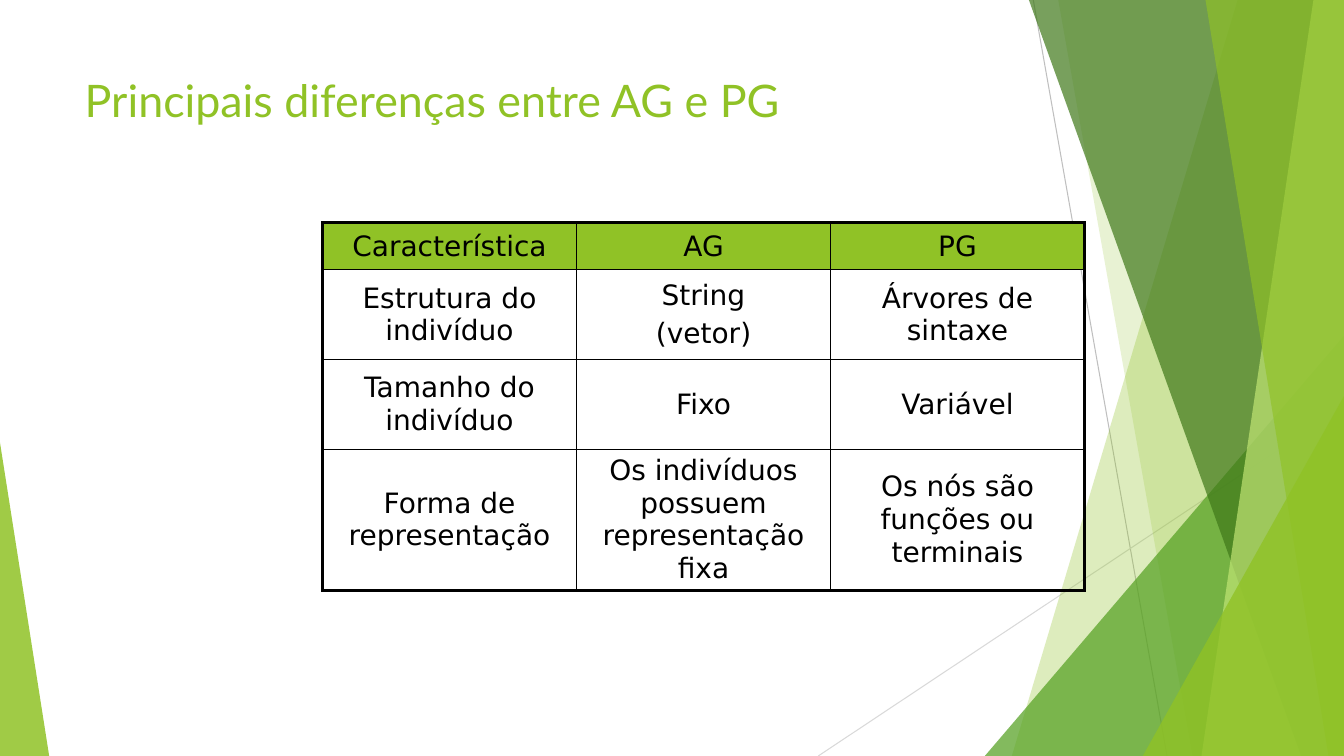
import pptx
import pptx.dml.color
import pptx.enum.shapes
import pptx.enum.text
import pptx.oxml
import pptx.oxml.ns
import pptx.util
from pptx.dml.color import RGBColor
from pptx.util import Cm

BLACK = RGBColor(0x00, 0x00, 0x00)
LIME = RGBColor(0x90, 0xC2, 0x26)
GREEN = RGBColor(0x54, 0xA0, 0x21)
FOREST = RGBColor(0x3F, 0x78, 0x19)
PALE_LIME = RGBColor(0xC0, 0xE4, 0x74)
GREY = RGBColor(0xBF, 0xBF, 0xBF)
LIGHT_GREY = RGBColor(0xD9, 0xD9, 0xD9)

WIDTH, HEIGHT = 33.87, 19.05

# Top-left x, bottom-left x, colour, opacity in percent
BANDS_BEHIND = [
    (31.19, 25.50, LIME, 30),
    (26.67, 30.05, LIME, 20),
]
BANDS_IN_FRONT = [
    (25.93, 32.79, FOREST, 70),
    (33.10, 30.28, PALE_LIME, 70),
    (30.38, 33.48, LIME, 65),
]

ROWS = [
    ["Característica", "AG", "PG"],
    ["Estrutura do indivíduo", "String\n(vetor)", "Árvores de sintaxe"],
    ["Tamanho do indivíduo", "Fixo", "Variável"],
    ["Forma de representação", "Os indivíduos possuem representação fixa",
     "Os nós são funções ou terminais"],
]
ROW_HEIGHTS = [1.19, 2.26, 2.26, 3.56]
COLUMN_WIDTH = 6.4


def write_text(frame, text, *, font, size, color, align, anchor, before=0):
    frame.word_wrap = True
    frame.vertical_anchor = anchor
    frame.text = text
    for para in frame.paragraphs:
        para.alignment = align
        para.space_before = pptx.util.Pt(before)
        for span in para.runs:
            span.font.name = font
            span.font.size = pptx.util.Pt(size)
            span.font.color.rgb = color


def paint(shape, color, opacity):
    shape.shadow.inherit = False
    shape.line.fill.background()
    shape.fill.solid()
    shape.fill.fore_color.rgb = color
    for tone in shape._element.spPr.iter(pptx.oxml.ns.qn("a:srgbClr")):
        alpha = pptx.oxml.parse_xml(
            f'<a:alpha {pptx.oxml.ns.nsdecls("a")} val="{opacity * 1000}"/>')
        tone.append(alpha)


def add_band(page, top_x, bottom_x, color, opacity):
    builder = page.shapes.build_freeform(Cm(top_x), 0)
    builder.add_line_segments([
        (Cm(WIDTH), 0), (Cm(WIDTH), Cm(HEIGHT)), (Cm(bottom_x), Cm(HEIGHT)),
    ], close=True)
    paint(builder.convert_to_shape(), color, opacity)


def add_corner(page, left, top, width, apex, color, opacity):
    shape = page.shapes.add_shape(
        pptx.enum.shapes.MSO_SHAPE.ISOSCELES_TRIANGLE,
        Cm(left), Cm(top), Cm(width), Cm(HEIGHT - top))
    shape.adjustments[0] = apex
    paint(shape, color, opacity)


def add_thin_line(page, start, end, color):
    line = page.shapes.add_connector(
        pptx.enum.shapes.MSO_CONNECTOR.STRAIGHT,
        *(Cm(value) for value in start + end))
    line.line.color.rgb = color
    line.line.width = pptx.util.Pt(0.75)
    line._element.spPr.append(pptx.oxml.parse_xml(
        f'<a:effectLst {pptx.oxml.ns.nsdecls("a")}/>'))


def add_decoration(page):
    add_thin_line(page, (26.04, 0), (29.41, HEIGHT), GREY)
    add_thin_line(page, (WIDTH, 10.24), (20.62, HEIGHT), LIGHT_GREY)
    for band in BANDS_BEHIND:
        add_band(page, *band)
    add_corner(page, 24.82, 8.46, WIDTH - 24.82, 1, GREEN, 72)
    for band in BANDS_IN_FRONT:
        add_band(page, *band)
    add_corner(page, 28.80, 9.98, WIDTH - 28.80, 1, LIME, 80)
    add_corner(page, 0, 11.15, 1.24, 0, LIME, 85)


def add_title(page, text):
    title = page.shapes.title
    title.left, title.top = Cm(1.88), Cm(1.7)
    title.width, title.height = Cm(23.88), Cm(3.66)
    write_text(title.text_frame, text, font="Lato", size=32, color=LIME,
               align=pptx.enum.text.PP_ALIGN.LEFT,
               anchor=pptx.enum.text.MSO_ANCHOR.TOP)
    title.text_frame.auto_size = pptx.enum.text.MSO_AUTO_SIZE.NONE


def set_borders(cell, outer_sides):
    for side in "LRTB":
        width = pptx.util.Pt(2.25 if side in outer_sides else 1)
        cell._tc.get_or_add_tcPr().append(pptx.oxml.parse_xml(
            f'<a:ln{side} {pptx.oxml.ns.nsdecls("a")} w="{width}">'
            f'<a:solidFill><a:srgbClr val="{BLACK}"/></a:solidFill></a:ln{side}>'))


def add_comparison(page):
    last_row, last_column = len(ROWS) - 1, len(ROWS[0]) - 1
    table = page.shapes.add_table(
        len(ROWS), len(ROWS[0]), Cm(8.13), Cm(5.61),
        Cm(COLUMN_WIDTH * len(ROWS[0])), Cm(sum(ROW_HEIGHTS))).table
    table.first_row = table.horz_banding = False
    for column in table.columns:
        column.width = Cm(COLUMN_WIDTH)
    for r, texts in enumerate(ROWS):
        table.rows[r].height = Cm(ROW_HEIGHTS[r])
        for c, text in enumerate(texts):
            cell = table.cell(r, c)
            edges = {"L": c == 0, "R": c == last_column,
                     "T": r == 0, "B": r == last_row}
            set_borders(cell, [side for side in edges if edges[side]])
            if r == 0:
                cell.fill.solid()
                cell.fill.fore_color.rgb = LIME
            else:
                cell.fill.background()
            write_text(cell.text_frame, text, font="DejaVu Sans", size=20,
                       color=BLACK, align=pptx.enum.text.PP_ALIGN.CENTER,
                       anchor=pptx.enum.text.MSO_ANCHOR.MIDDLE, before=4)
            cell.vertical_anchor = pptx.enum.text.MSO_ANCHOR.MIDDLE


def main():
    deck = pptx.Presentation()
    deck.slide_width, deck.slide_height = Cm(WIDTH), Cm(HEIGHT)
    page = deck.slides.add_slide(deck.slide_layouts[5])
    # Green facets at the sides
    add_decoration(page)
    # Heading and comparison table
    add_title(page, "Principais diferenças entre AG e PG")
    add_comparison(page)
    deck.save("out.pptx")


if __name__ == "__main__":
    main()
